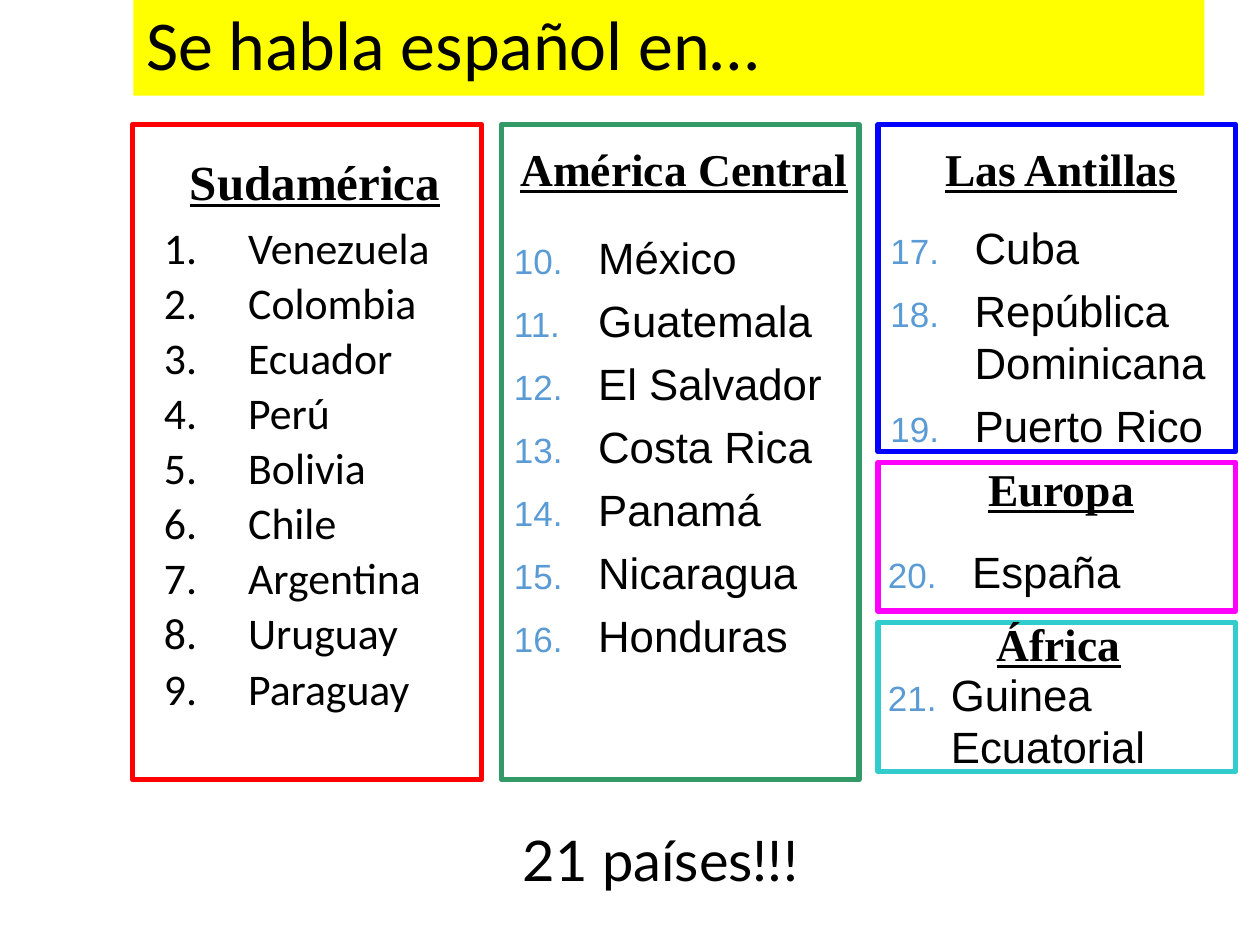
import pptx
import pptx.dml.color
import pptx.enum.shapes
import pptx.enum.text
import pptx.oxml.ns
import pptx.util
from lxml import etree
from pptx.util import Cm, Pt

BLACK = "000000"
NUMBER_BLUE = "5B9BD5"
HEADING_WIDTH = 9.4
INDENT = 1.7

# left, top, width, height, line colour
FRAMES = [
    (2.67, 2.51, 7.04, 13.21, "FF0000"),
    (10.11, 2.51, 7.21, 13.21, "339966"),
    (17.7, 2.51, 7.21, 6.6, "0000FF"),
    (17.7, 9.32, 7.21, 3, "FF00FF"),
    (17.7, 12.55, 7.21, 3, "33CCCC"),
]
# text, left, top, size
HEADINGS = [
    ("Sudamérica", 1.65, 2.92, 28),
    ("América Central", 9.09, 2.72, 26),
    ("Las Antillas", 16.69, 2.72, 26),
    ("Europa", 16.69, 9.17, 26),
    ("África", 16.64, 12.29, 26),
]
SOUTH_AMERICA = ["Venezuela", "Colombia", "Ecuador", "Perú", "Bolivia",
                 "Chile", "Argentina", "Uruguay", "Paraguay"]
# left, top, width, height, indent, countries
LISTS = [
    (10.11, 4.52, 8.43, 9.8, INDENT,
     ["México", "Guatemala", "El Salvador", "Costa Rica", "Panamá",
      "Nicaragua", "Honduras"]),
    (17.7, 4.32, 8.43, 3.99, INDENT,
     ["Cuba", "República Dominicana", "Puerto Rico"]),
    (17.65, 10.85, 7.52, 1.4, INDENT, ["España"]),
    (17.65, 13.33, 7.52, 2.3, 1.27, ["Guinea Ecuatorial"]),
]


def color(hex_string):
    return pptx.dml.color.RGBColor.from_string(hex_string)


def place(shape, left, top, width, height):
    shape.left, shape.top = Cm(left), Cm(top)
    shape.width, shape.height = Cm(width), Cm(height)


def set_font(paragraph, name, size):
    paragraph.font.name = name
    paragraph.font.size = Pt(size)
    paragraph.font.color.rgb = color(BLACK)


def number(paragraph, start, indent, number_color=None):
    """Number a paragraph; coloured numbers are drawn at 80 % of the text."""
    properties = paragraph._p.get_or_add_pPr()
    properties.set("marL", str(Cm(indent)))
    properties.set("indent", str(-Cm(indent)))

    def add(parent, tag, **attributes):
        return etree.SubElement(parent, pptx.oxml.ns.qn(tag), attributes)

    if number_color:
        add(add(properties, "a:buClr"), "a:srgbClr", val=number_color)
        add(properties, "a:buSzPct", val="80000")
    add(properties, "a:buFont", typeface="Arial" if number_color else "Calibri")
    add(properties, "a:buAutoNum", type="arabicPeriod", startAt=str(start))


def fill_list(text_frame, countries, start, indent, font_name, space, number_color=None):
    text_frame.text = "\n".join(countries)
    for paragraph in text_frame.paragraphs:
        number(paragraph, start, indent, number_color)
        paragraph.space_before = Pt(space)
        set_font(paragraph, font_name, 25)


def add_text_box(slide, left, top, width, height):
    text_frame = slide.shapes.add_textbox(
        Cm(left), Cm(top), Cm(width), Cm(height)).text_frame
    text_frame.word_wrap = True
    return text_frame


def add_frame(slide, left, top, width, height, line_color):
    frame = slide.shapes.add_shape(
        pptx.enum.shapes.MSO_SHAPE.RECTANGLE,
        Cm(left), Cm(top), Cm(width), Cm(height))
    frame.shadow.inherit = False
    frame.fill.background()
    frame.line.color.rgb = color(line_color)
    frame.line.width = Pt(3)


def add_heading(slide, text, left, top, size):
    text_frame = add_text_box(slide, left, top, HEADING_WIDTH, 1.35)
    text_frame.text = text
    paragraph = text_frame.paragraphs[0]
    paragraph.alignment = pptx.enum.text.PP_ALIGN.CENTER
    set_font(paragraph, "Times New Roman", size)
    paragraph.font.bold = True
    paragraph.font.underline = True


def format_title(title):
    place(title, 2.69, 0, 21.59, 1.93)
    title.fill.solid()
    title.fill.fore_color.rgb = color("FFFF00")
    title.text_frame.text = "Se habla español en…"
    title.text_frame.auto_size = pptx.enum.text.MSO_AUTO_SIZE.NONE
    title.text_frame.vertical_anchor = pptx.enum.text.MSO_ANCHOR.MIDDLE
    paragraph = title.text_frame.paragraphs[0]
    paragraph.alignment = pptx.enum.text.PP_ALIGN.LEFT
    paragraph.line_spacing = 0.9
    set_font(paragraph, "Calibri", 40)


def format_body(body):
    place(body, 3.05, 4.52, 8.43, 10.8)
    body.text_frame.auto_size = pptx.enum.text.MSO_AUTO_SIZE.NONE
    fill_list(body.text_frame, SOUTH_AMERICA, 1, INDENT, "Calibri", 7.5)
    for paragraph in body.text_frame.paragraphs:
        paragraph.line_spacing = 0.8


def add_total(slide):
    text_frame = add_text_box(slide, 10.29, 16.51, 11, 1.6)
    text_frame.text = "21 países!!!"
    set_font(text_frame.paragraphs[0], "Lato", 32)


def main():
    presentation = pptx.Presentation()
    presentation.slide_width = Cm(25.4)
    presentation.slide_height = Cm(19.05)
    slide = presentation.slides.add_slide(presentation.slide_layouts[1])
    format_title(slide.shapes.title)
    format_body(slide.placeholders[1])
    for frame in FRAMES:
        add_frame(slide, *frame)
    for heading in HEADINGS:
        add_heading(slide, *heading)
    start = len(SOUTH_AMERICA) + 1
    for left, top, width, height, indent, countries in LISTS:
        text_frame = add_text_box(slide, left, top, width, height)
        fill_list(text_frame, countries, start, indent, "Arial", 6, NUMBER_BLUE)
        start += len(countries)
    add_total(slide)
    presentation.save("out.pptx")


if __name__ == "__main__":
    main()
